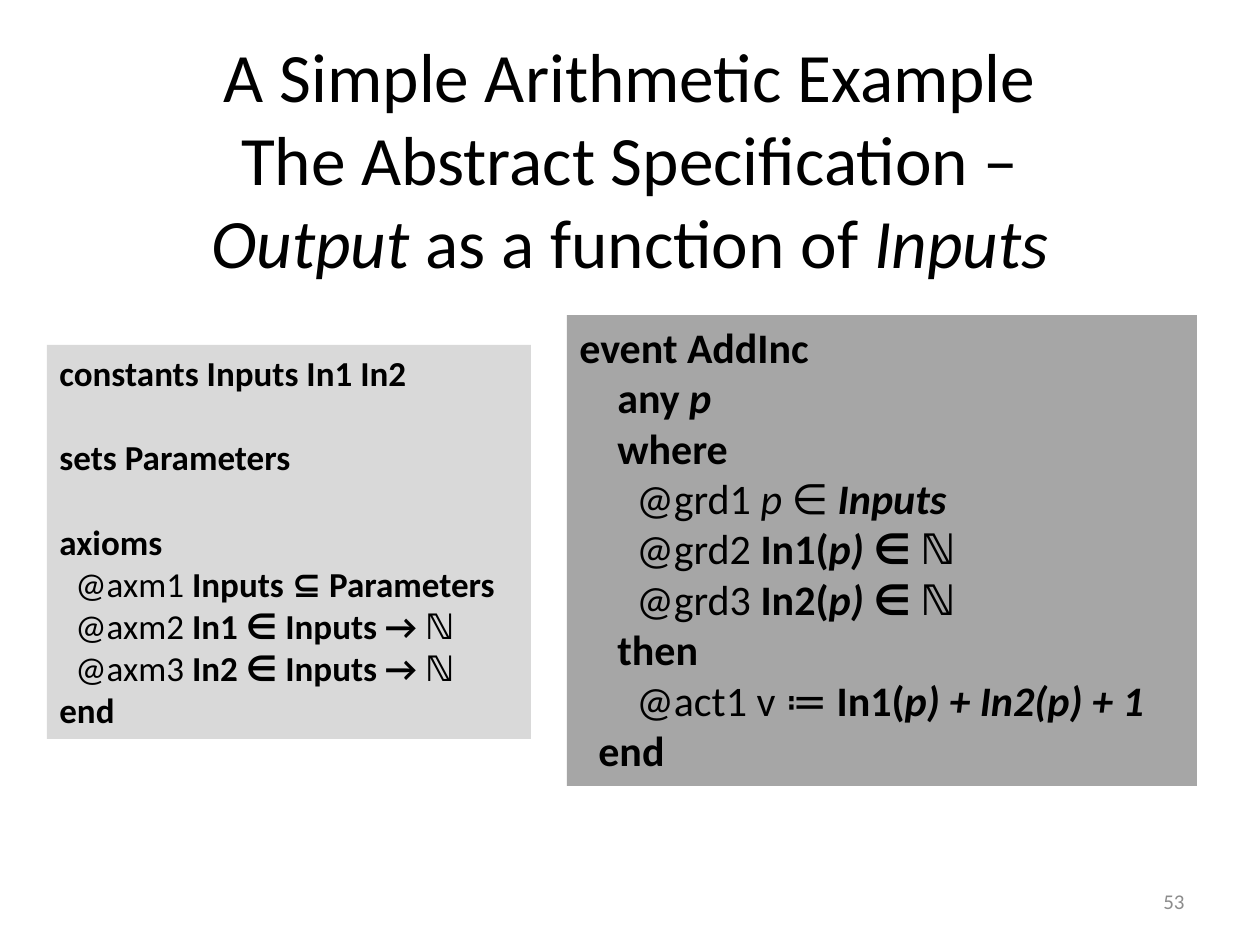
from dataclasses import dataclass, field
from pptx import Presentation
from pptx import util as u
from pptx.dml.color import RGBColor
from pptx.enum import shapes, text

PX = 914400 // 126
FONT = "Calibri"
LEFT, CENTER, RIGHT = text.PP_ALIGN.LEFT, text.PP_ALIGN.CENTER, text.PP_ALIGN.RIGHT
TOP, MIDDLE = text.MSO_ANCHOR.TOP, text.MSO_ANCHOR.MIDDLE


@dataclass
class Run:
    text: str
    bold: bool = False
    italic: bool = False


@dataclass
class Line:
    runs: list[Run]
    indent: int = 0
    before: float = 0


@dataclass
class Box:
    left: int
    top: int
    width: int
    height: int
    size: float
    lines: list[Line] = field(default_factory=list)
    fill: str = ""
    color: str = "000000"
    align: text.PP_ALIGN = LEFT
    anchor: text.MSO_ANCHOR = TOP


def rgb(value: str) -> RGBColor:
    return RGBColor.from_string(value)


def plain(words: str) -> Run:
    return Run(words)


def bold(words: str) -> Run:
    return Run(words, bold=True)


def italic(words: str) -> Run:
    return Run(words, italic=True)


def strong(words: str) -> Run:
    return Run(words, bold=True, italic=True)


def add_run(p, run: Run, box: Box) -> None:
    for i, part in enumerate(run.text.split("\n")):
        if i:
            p.add_line_break()
        if not part:
            continue
        r = p.add_run()
        r.text = part
        formats = {"name": FONT, "size": u.Pt(box.size), "bold": run.bold, "italic": run.italic}
        for name, value in formats.items():
            setattr(r.font, name, value)
        r.font.color.rgb = rgb(box.color)


def draw_box(s, box: Box) -> None:
    place = [n * PX for n in (box.left, box.top, box.width, box.height)]
    if box.fill:
        sp = s.shapes.add_shape(shapes.MSO_SHAPE.RECTANGLE, *place)
        sp.shadow.inherit = False
        sp.fill.solid()
        sp.fill.fore_color.rgb = rgb(box.fill)
        sp.line.fill.background()
    else:
        sp = s.shapes.add_textbox(*place)
    tf = sp.text_frame
    formats = {"word_wrap": True, "vertical_anchor": box.anchor, "auto_size": text.MSO_AUTO_SIZE.NONE}
    for name, value in formats.items():
        setattr(tf, name, value)
    for i, line in enumerate(box.lines):
        p = tf.add_paragraph() if i else tf.paragraphs[0]
        p.alignment = box.align
        p.space_before = u.Pt(line.before)
        if line.indent:
            p._p.get_or_add_pPr().set("marL", str(line.indent * PX))
        for run in line.runs:
            add_run(p, run, box)


STEP = 19
AXIOM = 16
GAP = 24.4

title = Box(63, 38, 1134, 239, 39.6, align=CENTER, anchor=MIDDLE, lines=[
    Line([plain("A Simple Arithmetic Example\nThe Abstract Specification –\n"),
          italic("Output"), plain(" as a function of "), italic("Inputs")]),
])
number = Box(903, 876, 294, 50, 12, [Line([plain("53")])], color="8C8C8C", align=RIGHT, anchor=MIDDLE)
event = Box(567, 315, 630, 471, 24, fill="A6A6A6", lines=[
    Line([bold("event AddInc")]),
    Line([bold("any "), strong("p")], 2 * STEP),
    Line([bold("where")], 2 * STEP),
    Line([plain("@grd1 "), italic("p ∈ "), strong("Inputs")], 3 * STEP),
    *[Line([plain(f"@grd{n + 1} "), bold(f"In{n}("), strong("p) ∈ ℕ")], 3 * STEP) for n in (1, 2)],
    Line([bold("then")], 2 * STEP),
    Line([plain("@act1 v ≔ "), bold("In1("), strong("p) + In2(p) + 1")], 3 * STEP),
    Line([bold("end")], STEP),
])
context = Box(47, 345, 484, 394, 20, fill="D9D9D9", lines=[
    Line([bold("constants Inputs In1 In2")]),
    Line([bold("sets Parameters")], before=GAP),
    Line([bold("axioms")], before=GAP),
    Line([plain("@axm1 "), bold("Inputs ⊆ Parameters")], AXIOM),
    *[Line([plain(f"@axm{n + 1} "), bold(f"In{n} ∈ Inputs → ℕ")], AXIOM) for n in (1, 2)],
    Line([bold("end")]),
])


def main() -> None:
    prs = Presentation()
    prs.slide_width, prs.slide_height = u.Inches(10), u.Inches(7.5)
    s = prs.slides.add_slide(prs.slide_layouts[6])
    for box in (title, number, event, context):
        draw_box(s, box)
    prs.save("out.pptx")


if __name__ == "__main__":
    main()
